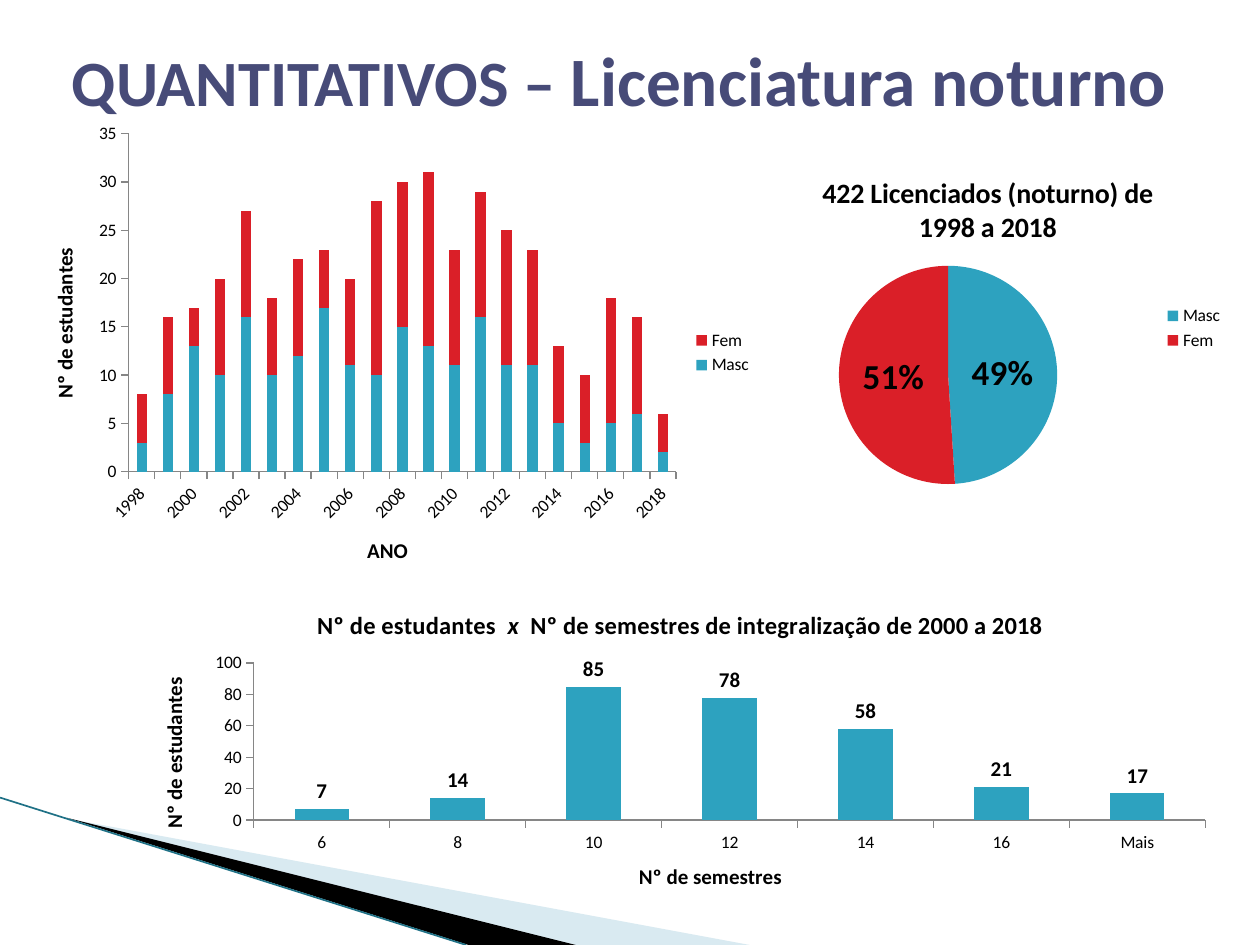
from dataclasses import dataclass
from lxml.etree import SubElement
from pptx import Presentation
from pptx.chart.data import CategoryChartData
from pptx.dml.color import RGBColor
from pptx.enum.chart import XL_CHART_TYPE, XL_LABEL_POSITION, XL_LEGEND_POSITION, XL_TICK_MARK
from pptx.enum.shapes import MSO_CONNECTOR
from pptx.enum.text import MSO_ANCHOR, PP_ALIGN
from pptx.oxml import parse_xml
from pptx.oxml.ns import nsdecls, qn
from pptx.util import Inches, Pt


@dataclass(frozen=True)
class Theme:
    font: str = "Calibri"
    head: str = "474B78"
    text: str = "000000"
    masc: str = "2DA2BF"
    fem: str = "DA1F28"
    pale: str = "A0CBDC"
    dark: str = "000000"
    edge: str = "1F7186"
    axis: str = "868686"
    small: float = 10
    label: float = 12
    sub: float = 14
    top: float = 16
    share: float = 20
    lead: float = 36.9
    main: float = 39.6


THEME = Theme()
COUNT = "Nº de estudantes"


def style(font, size, color=THEME.text, bold=True):
    font.name = THEME.font
    font.size = Pt(size)
    font.bold = bold
    font.color.rgb = RGBColor.from_string(color)


def paint(fill, color):
    fill.solid()
    fill.fore_color.rgb = RGBColor.from_string(color)


def add_wedge(slide, points, color, alpha=None):
    first, *rest = [(Inches(x), Inches(y)) for x, y in points]
    pen = slide.shapes.build_freeform(*first)
    pen.add_line_segments(rest)
    shape = pen.convert_to_shape()
    shape.shadow.inherit = False
    shape.line.fill.background()
    paint(shape.fill, color)
    if alpha:
        tint = shape.fill._xPr.find(".//" + qn("a:srgbClr"))
        SubElement(tint, qn("a:alpha"), val=str(alpha * 1000))


def add_edge(slide, start, end):
    line = slide.shapes.add_connector(
        MSO_CONNECTOR.STRAIGHT, *[Inches(n) for n in (*start, *end)])
    line.line.width = Pt(0.95)
    line.line.color.rgb = RGBColor.from_string(THEME.edge)
    SubElement(line._element.spPr, qn("a:effectLst"))


def add_title(slide, parts):
    box = slide.shapes.add_textbox(Inches(0.02), Inches(0), Inches(9.79), Inches(1.25))
    frame = box.text_frame
    frame.word_wrap = True
    frame.vertical_anchor = MSO_ANCHOR.MIDDLE
    para = frame.paragraphs[0]
    para.alignment = PP_ALIGN.CENTER
    for text, size in parts:
        run = para.add_run()
        run.text = text
        style(run.font, size, THEME.head)


def add_chart(slide, kind, box, cats, series, plot):
    data = CategoryChartData()
    data.categories = cats
    for name, vals in series:
        data.add_series(name, vals)
    chart = slide.shapes.add_chart(kind, *[Inches(n) for n in box], data).chart
    style(chart.font, THEME.small, bold=False)
    chart.has_title = False
    chart.has_legend = len(series) > 1
    set_plot(chart, plot)
    return chart


def set_plot(chart, plot):
    area = chart._chartSpace.chart.plotArea
    for old in area.findall(qn("c:layout")):
        area.remove(old)
    sizes = "".join(f'<c:{tag} val="{n}"/>' for tag, n in zip("xywh", plot))
    area.insert(0, parse_xml(
        f'<c:layout {nsdecls("c")}><c:manualLayout><c:layoutTarget val="inner"/>'
        f'<c:xMode val="edge"/><c:yMode val="edge"/>{sizes}</c:manualLayout></c:layout>'))


def add_legend(chart):
    chart.has_legend = True
    chart.legend.position = XL_LEGEND_POSITION.RIGHT
    chart.legend.include_in_layout = False
    style(chart.legend.font, THEME.small, bold=False)


def set_head(owner, parts, size):
    frame = owner.text_frame
    para = frame.paragraphs[0]
    for text, slant in parts:
        run = para.add_run()
        run.text = text
        style(run.font, size)
        run.font.italic = slant
    return frame


def set_axes(chart, cat, top, step):
    for axis, text in ((chart.category_axis, cat), (chart.value_axis, COUNT)):
        axis.has_major_gridlines = False
        axis.major_tick_mark = XL_TICK_MARK.OUTSIDE
        axis.minor_tick_mark = XL_TICK_MARK.NONE
        axis.format.line.color.rgb = RGBColor.from_string(THEME.axis)
        style(axis.tick_labels.font, THEME.small, bold=False)
        frame = set_head(axis.axis_title, [(text, False)], THEME.label)
    frame._txBody.bodyPr.set("rot", "-5400000")
    chart.value_axis.minimum_scale = 0
    chart.value_axis.maximum_scale = top
    chart.value_axis.major_unit = step
    chart.plots[0].gap_width = 150


def set_labels(plot, size, place):
    plot.has_data_labels = True
    labels = plot.data_labels
    labels.position = place
    style(labels.font, size)
    return labels


def add_share(slide):
    chart = add_chart(slide, XL_CHART_TYPE.PIE, (5.87, 1.23, 3.94, 2.75),
                      ["Masc", "Fem"], [("Series 1", (49, 51))],
                      (0.2, 0.32, 0.44, 0.63))
    set_head(chart.chart_title, [("422 Licenciados (noturno) de 1998 a 2018", False)], THEME.top)
    add_legend(chart)
    plot = chart.plots[0]
    for i, color in enumerate((THEME.masc, THEME.fem)):
        paint(plot.series[0].points[i].format.fill, color)
    labels = set_labels(plot, THEME.share, XL_LABEL_POSITION.CENTER)
    labels.show_percentage = True
    labels.show_value = False
    labels.number_format = "0%"
    labels.number_format_is_linked = False


def add_years(slide):
    masc = (3, 8, 13, 10, 16, 10, 12, 17, 11, 10, 15, 13, 11, 16, 11, 11, 5, 3, 5, 6, 2)
    fem = (5, 8, 4, 10, 11, 8, 10, 6, 9, 18, 15, 18, 12, 13, 14, 12, 8, 7, 13, 10, 4)
    chart = add_chart(slide, XL_CHART_TYPE.COLUMN_STACKED, (0.2, 0.91, 5.87, 3.78),
                      [str(year) for year in range(1998, 2019)],
                      [("Masc", masc), ("Fem", fem)], (0.14, 0.04, 0.74, 0.71))
    add_legend(chart)
    set_axes(chart, "ANO", 35, 5)
    plot = chart.plots[0]
    plot.overlap = 100
    for series, color in zip(plot.series, (THEME.masc, THEME.fem)):
        paint(series.format.fill, color)
    axis = chart.category_axis._element
    axis.find(qn("c:txPr")).find(qn("a:bodyPr")).set("rot", "-2700000")
    skip = parse_xml(f'<c:tickLblSkip {nsdecls("c")} val="2"/>')
    axis.find(qn("c:noMultiLvlLbl")).addprevious(skip)


def add_terms(slide):
    chart = add_chart(slide, XL_CHART_TYPE.COLUMN_CLUSTERED, (1.06, 4.69, 8.68, 2.6),
                      ["6", "8", "10", "12", "14", "16", "Mais"],
                      [("Series 1", (7, 14, 85, 78, 58, 21, 17))],
                      (0.11, 0.22, 0.87, 0.48))
    set_head(chart.chart_title, [
        (COUNT + "  ", False), ("x", True),
        ("  Nº de semestres de integralização de 2000 a 2018", False)], THEME.sub)
    set_axes(chart, "Nº de semestres", 100, 20)
    plot = chart.plots[0]
    plot.vary_by_categories = False
    paint(plot.series[0].format.fill, THEME.masc)
    set_labels(plot, THEME.label, XL_LABEL_POSITION.OUTSIDE_END).show_value = True


def main():
    deck = Presentation()
    deck.slide_width, deck.slide_height = Inches(10), Inches(7.5)
    slide = deck.slides.add_slide(deck.slide_layouts[6])
    add_wedge(slide, [(0.55, 6.5), (5.95, 7.5), (4.56, 7.5)], THEME.pale, 40)
    add_wedge(slide, [(0.53, 6.49), (4.57, 7.5), (3.72, 7.5)], THEME.dark)
    add_edge(slide, (0, 6.33), (3.7, 7.5))
    add_title(slide, [("QUANTITATIVOS – ", THEME.lead), ("Licenciatura noturno", THEME.main)])
    add_share(slide)
    add_years(slide)
    add_terms(slide)
    deck.save("out.pptx")


if __name__ == "__main__":
    main()
